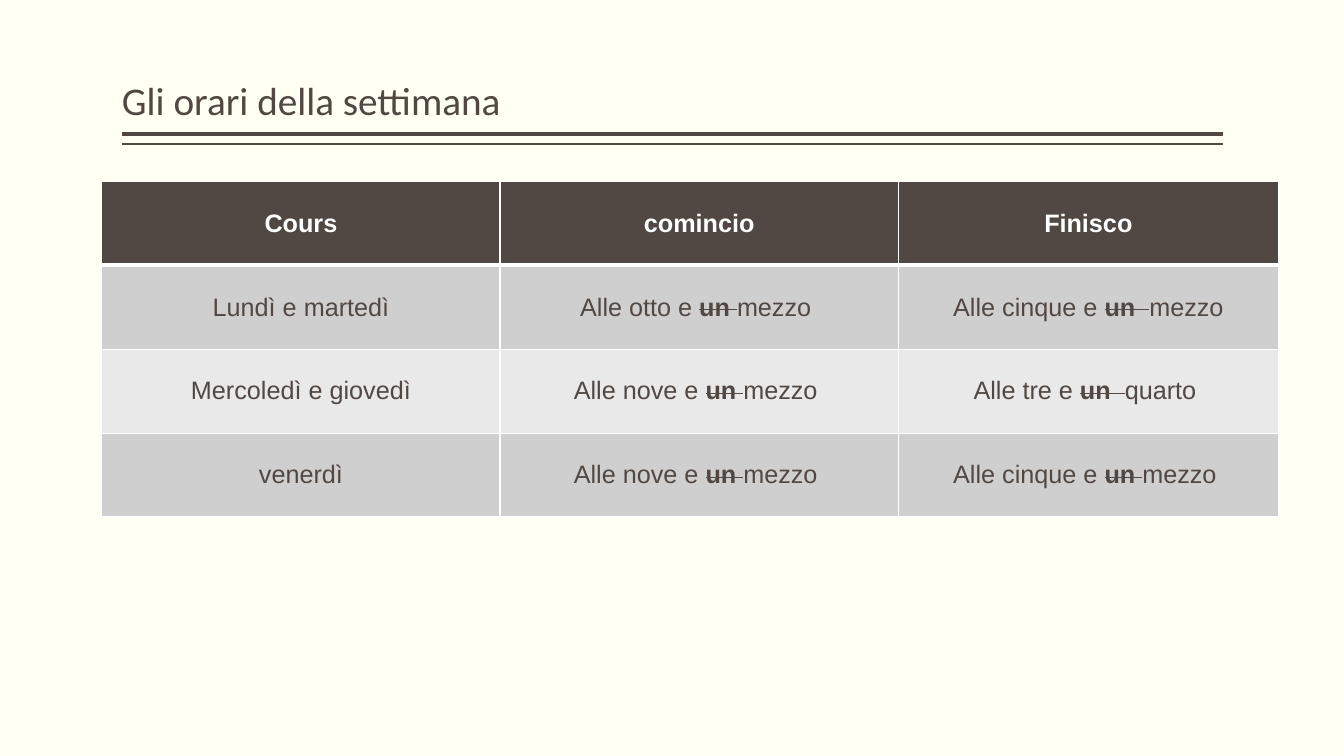
from lxml.etree import SubElement
from pptx import Presentation
from pptx.dml.color import RGBColor
from pptx.enum.shapes import MSO_CONNECTOR
from pptx.enum.text import MSO_ANCHOR, PP_ALIGN
from pptx.oxml.ns import qn
from pptx.util import Inches, Pt

COLORS = {
    "background": "FFFFF3",
    "brown": "514843",
    "white": "FFFFFF",
    "dark_band": "D0CFCF",
    "light_band": "E9E9E9",
}
COLUMN_WIDTHS = [3.95, 3.95, 3.77]
HEADINGS = ["Cours", "comincio", "Finisco"]
# Each time is split into plain, struck-out and plain text
TIMETABLE = [
    [("Lundì e martedì",), ("Alle otto e ", "un ", "mezzo "), ("Alle cinque e ", "un  ", "mezzo")],
    [("Mercoledì e giovedì",), ("Alle nove e ", "un ", "mezzo "), ("Alle tre e ", "un  ", "quarto ")],
    [("venerdì",), ("Alle nove e ", "un ", "mezzo "), ("Alle cinque e ", "un ", "mezzo ")],
]


def color(name):
    return RGBColor.from_string(COLORS[name])


def add_span(para, text, font, size, color_name, bold=False, struck=False):
    span = para.add_run()
    span.text = text
    span.font.name = font
    span.font.size = Pt(size)
    span.font.bold = bold
    span.font.color.rgb = color(color_name)
    if struck:
        span._r.get_or_add_rPr().set("strike", "sngStrike")


def add_rule(page, left, top, width, weight):
    rule = page.shapes.add_connector(
        MSO_CONNECTOR.STRAIGHT, Inches(left), Inches(top), Inches(left + width), Inches(top))
    rule.line.color.rgb = color("brown")
    rule.line.width = Pt(weight)
    SubElement(rule._element.spPr, qn("a:effectLst"))


def add_heading(page, left, top, width, height):
    # Title
    box = page.shapes.add_textbox(Inches(left), Inches(top), Inches(width), Inches(height))
    frame = box.text_frame
    frame.word_wrap = True
    frame.vertical_anchor = MSO_ANCHOR.BOTTOM
    frame.margin_left = frame.margin_right = 0
    para = frame.paragraphs[0]
    para.line_spacing = 0.9
    add_span(para, "Gli orari della settimana", "Calibri", 28, "brown")

    # Double rule under the title
    bottom = top + height
    add_rule(page, left, bottom + 0.05, width, 3)
    add_rule(page, left, bottom + 0.15, width, 1)


def add_borders(cell, bottom_weight):
    properties = cell._tc.get_or_add_tcPr()
    for side, weight in zip("LRTB", (1, 1, 1, bottom_weight)):
        border = SubElement(properties, qn(f"a:ln{side}"), w=str(Pt(weight)))
        fill = SubElement(border, qn("a:solidFill"))
        SubElement(fill, qn("a:srgbClr"), val=COLORS["white"])


def fill_cell(cell, parts, fill_name, is_heading):
    add_borders(cell, 3 if is_heading else 1)
    cell.fill.solid()
    cell.fill.fore_color.rgb = color(fill_name)
    cell.vertical_anchor = MSO_ANCHOR.MIDDLE
    para = cell.text_frame.paragraphs[0]
    para.alignment = PP_ALIGN.CENTER
    for index, text in enumerate(parts):
        struck = index == 1
        add_span(para, text, "Arial", 18, "white" if is_heading else "brown",
                 bold=is_heading or struck, struck=struck)


def add_timetable(page, left, top, width, height):
    rows = [[(heading,) for heading in HEADINGS]] + TIMETABLE
    table = page.shapes.add_table(
        len(rows), len(HEADINGS), Inches(left), Inches(top), Inches(width), Inches(height)).table
    for column, column_width in zip(table.columns, COLUMN_WIDTHS):
        column.width = Inches(column_width)
    for row_index, row in enumerate(rows):
        table.rows[row_index].height = Inches(height / len(rows))
        is_heading = row_index == 0
        band = "dark_band" if row_index % 2 else "light_band"
        for column_index, parts in enumerate(row):
            fill_cell(table.cell(row_index, column_index), parts,
                      "brown" if is_heading else band, is_heading)


def main():
    deck = Presentation()
    deck.slide_width, deck.slide_height = Inches(13.33), Inches(7.5)
    page = deck.slides.add_slide(deck.slide_layouts[6])
    page.background.fill.solid()
    page.background.fill.fore_color.rgb = color("background")
    add_heading(page, 1.21, 0.08, 10.92, 1.2)
    add_timetable(page, 1.01, 1.8, sum(COLUMN_WIDTHS), 3.33)
    deck.save("out.pptx")


if __name__ == "__main__":
    main()
